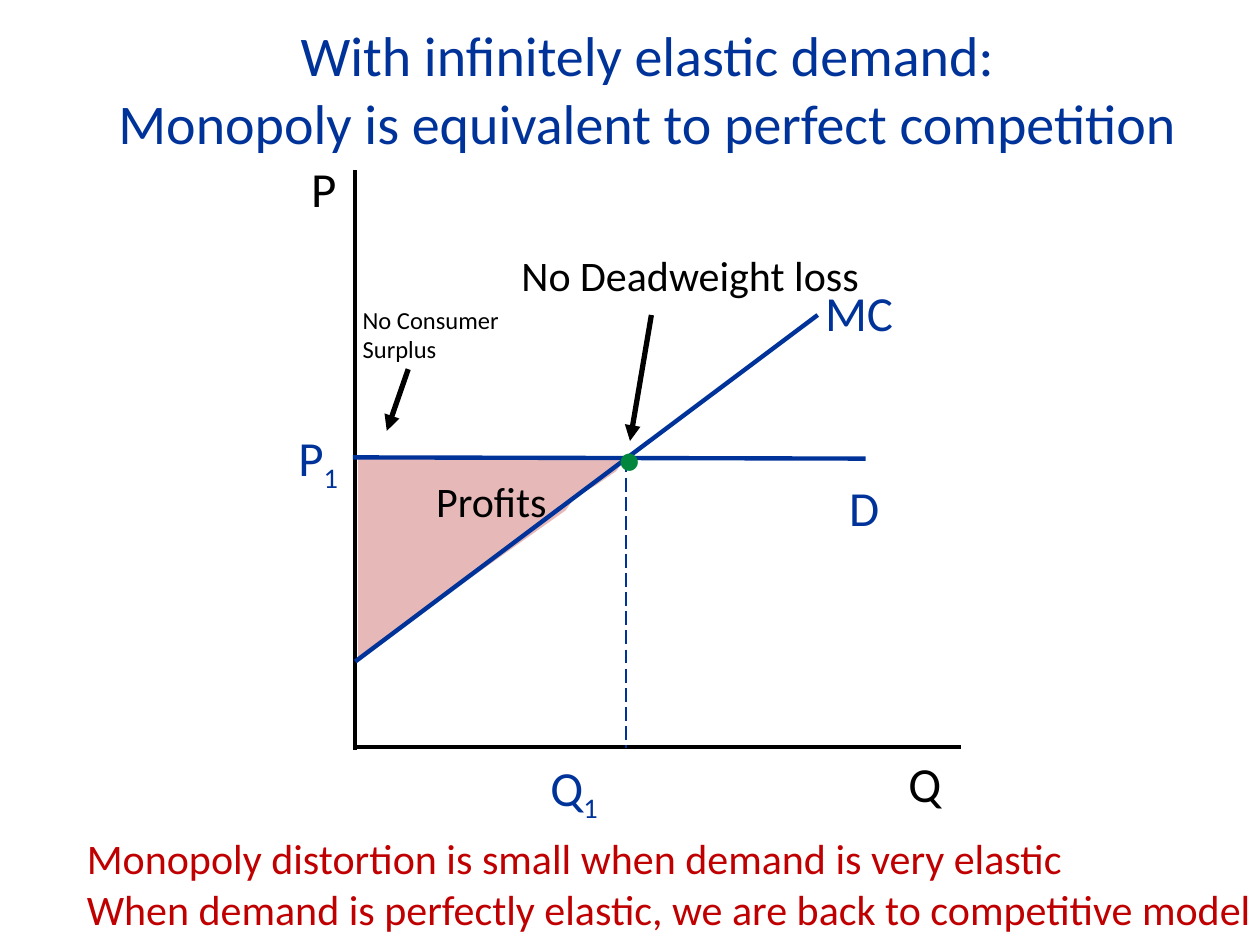
from dataclasses import dataclass
from typing import Optional

from lxml import etree
from pptx import Presentation
from pptx.dml.color import RGBColor
from pptx.enum import dml, shapes, text
from pptx.oxml import ns
from pptx.util import Inches, Pt

FONT = "Calibri"
BLACK = RGBColor(0x00, 0x00, 0x00)
BLUE = RGBColor(0x00, 0x33, 0x99)
RED = RGBColor(0xC0, 0x00, 0x00)
GREEN = RGBColor(0x00, 0x86, 0x3D)
PINK = RGBColor(0xE6, 0xB9, 0xB8)


@dataclass(frozen=True)
class Label:
    lines: tuple[str, ...]
    left: float
    top: float
    width: float
    height: float
    size: int
    color: RGBColor
    subscript: str = ""
    wrap: bool = True
    spacing: Optional[float] = None
    align: Optional[text.PP_ALIGN] = None


@dataclass(frozen=True)
class Segment:
    start: tuple[float, float]
    end: tuple[float, float]
    color: RGBColor
    width: float = 2.5
    dashed: bool = False
    arrow: bool = False


SEGMENTS = (
    Segment((2.82, 1.35), (2.82, 5.95), BLACK),
    Segment((2.83, 5.93), (7.63, 5.93), BLACK),
    Segment((2.8, 3.63), (6.87, 3.64), BLUE),
    Segment((2.82, 5.25), (6.49, 2.5), BLUE),
    Segment((5.17, 2.5), (5, 3.5), BLACK, 3, arrow=True),
    Segment((4.97, 3.64), (4.97, 5.94), BLUE, 1, dashed=True),
    Segment((3.24, 2.93), (3.07, 3.42), BLACK, 3, arrow=True),
)

LABELS = (
    Label(("P",), 2.37, 1.3, 0.45, 0.49, 28, BLACK, spacing=0.8),
    Label(("Q",), 6.87, 5.93, 0.7, 0.57, 28, BLACK, align=text.PP_ALIGN.RIGHT),
    Label(("P",), 2.27, 3.39, 0.54, 0.49, 28, BLUE, subscript="1", spacing=0.8),
    Label(("Q",), 4.27, 6.01, 0.64, 0.48, 28, BLUE, subscript="1", spacing=0.8),
    Label(("D",), 6.64, 3.74, 0.92, 0.57, 28, BLUE),
    Label(("MC",), 6.45, 2.19, 0.92, 0.57, 28, BLUE),
    Label(("No Consumer", "Surplus"), 2.78, 2.37, 1.29, 0.88, 14, BLACK, wrap=False),
    Label(("No Deadweight loss",), 4.04, 1.93, 2.9, 0.81, 24, BLACK, wrap=False),
    Label(
        (
            "Monopoly distortion is small when demand is very elastic",
            "When demand is perfectly elastic, we are back to competitive model",
        ),
        0.59, 6.56, 10.12, 0.91, 24, RED,
    ),
    Label(("•",), 4.8, 3.34, 0.33, 0.57, 28, GREEN),
)

PROFIT_OUTLINE = (
    (2.84, 5.22), (2.84, 3.64), (4.96, 3.64), (4.89, 3.74),
    (4.73, 3.85), (4.56, 3.95), (4.49, 4.05),
)


def add_run(paragraph, content: str, size: int, color: RGBColor):
    run = paragraph.add_run()
    run.text = content
    run.font.name = FONT
    run.font.size = Pt(size)
    run.font.color.rgb = color
    return run


def write_lines(frame, lines, size: int, color: RGBColor, align=None, spacing=None):
    for index, line in enumerate(lines):
        paragraph = frame.add_paragraph() if index else frame.paragraphs[0]
        paragraph.alignment = align
        paragraph.line_spacing = spacing
        add_run(paragraph, line, size, color)


def add_label(slide, label: Label) -> None:
    box = slide.shapes.add_textbox(
        Inches(label.left), Inches(label.top), Inches(label.width), Inches(label.height)
    )
    frame = box.text_frame
    frame.word_wrap = label.wrap
    frame.auto_size = text.MSO_AUTO_SIZE.SHAPE_TO_FIT_TEXT
    write_lines(frame, label.lines, label.size, label.color, label.align, label.spacing)
    if label.subscript:
        run = add_run(frame.paragraphs[-1], label.subscript, label.size, label.color)
        run._r.get_or_add_rPr().set("baseline", "-25000")


def add_segment(slide, segment: Segment) -> None:
    connector = slide.shapes.add_connector(
        shapes.MSO_CONNECTOR.STRAIGHT,
        *(Inches(value) for value in segment.start + segment.end),
    )
    line = connector.line
    line.color.rgb = segment.color
    line.width = Pt(segment.width)
    if segment.dashed:
        line.dash_style = dml.MSO_LINE.LONG_DASH
    if segment.arrow:
        etree.SubElement(line._get_or_add_ln(), ns.qn("a:tailEnd"), type="triangle")
    etree.SubElement(connector._element.spPr, ns.qn("a:effectLst"))


def add_profit_area(slide) -> None:
    points = [(Inches(x), Inches(y)) for x, y in PROFIT_OUTLINE]
    builder = slide.shapes.build_freeform(*points[0], scale=1.0)
    builder.add_line_segments(points[1:], close=True)
    area = builder.convert_to_shape()
    area.shadow.inherit = False
    area.fill.solid()
    area.fill.fore_color.rgb = PINK
    area.line.fill.background()
    frame = area.text_frame
    frame.vertical_anchor = text.MSO_ANCHOR.TOP
    frame.margin_top = Inches(0.13)
    write_lines(frame, ("Profits",), 24, BLACK, text.PP_ALIGN.CENTER)


def add_title(slide) -> None:
    title = slide.shapes.title
    title.left, title.top = Inches(0.7), Inches(0.11)
    title.width, title.height = Inches(8.88), Inches(1.18)
    frame = title.text_frame
    frame.auto_size = text.MSO_AUTO_SIZE.NONE
    frame.vertical_anchor = text.MSO_ANCHOR.MIDDLE
    lines = (
        "With infinitely elastic demand:",
        "Monopoly is equivalent to perfect competition",
    )
    write_lines(frame, lines, 32, BLUE, text.PP_ALIGN.CENTER)


def main() -> None:
    presentation = Presentation()
    presentation.slide_width = Inches(10)
    presentation.slide_height = Inches(7.5)
    slide = presentation.slides.add_slide(presentation.slide_layouts[5])
    add_title(slide)
    add_profit_area(slide)
    for segment in SEGMENTS:
        add_segment(slide, segment)
    for label in LABELS:
        add_label(slide, label)
    presentation.save("out.pptx")


if __name__ == "__main__":
    main()
